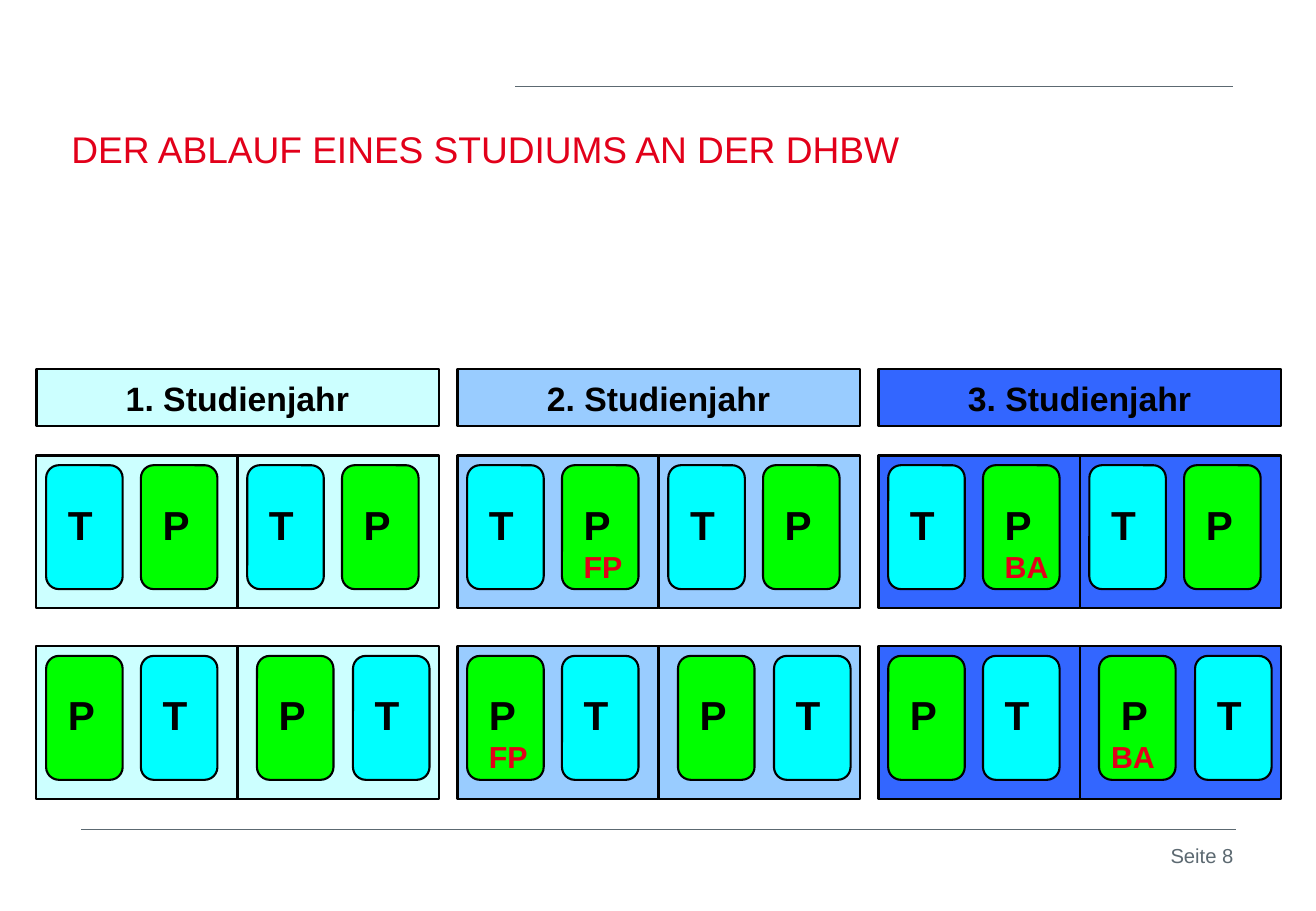
from lxml import etree
from pptx import Presentation, util as u
from pptx.dml.color import RGBColor
from pptx.enum import shapes, text
from pptx.oxml.ns import qn

BLACK, RED, GREY = "000000", "E2001A", "5C6971"
YEAR_COLOURS = ["CCFFFF", "99CCFF", "3366FF"]
PHASE_COLOURS = {"T": "00FFFF", "P": "00FF00"}
LETTER_WIDTHS = {"T": 0.39, "P": 0.47}
YEAR_LEFT, YEAR_PITCH, YEAR_WIDTH = 0.3, 3.465, 3.31
HALF_WIDTH, HALF_HEIGHT = YEAR_WIDTH / 2, 1.26
COURSES = [
    {"top": 3.75, "order": "TPTP", "offsets": (0.08, 0.86, 0.08, 0.86),
     "exams": {1: ("FP", 1, 0.08), 2: ("BA", 1, 0.08)}},
    {"top": 5.32, "order": "PTPT", "offsets": (0.08, 0.86, 0.16, 0.95),
     "exams": {1: ("FP", 0, 0.08), 2: ("BA", 2, 0)}},
]


def colour(hex_string):
    """Turn a hex string into a colour."""
    return RGBColor.from_string(hex_string)


def inches(box):
    """Turn left, top, width and height into lengths."""
    return [u.Inches(length) for length in box]


def write(frame, words, size, ink, bold=False, align=text.PP_ALIGN.LEFT):
    """Write one run into a text frame."""
    frame.word_wrap = True
    line = frame.paragraphs[0]
    line.alignment = align
    run = line.add_run()
    run.text = words
    run.font.name, run.font.size, run.font.bold = "Arial", u.Pt(size), bold
    run.font.color.rgb = colour(ink)


def add_label(parent, box, words, size, ink, bold=False, align=text.PP_ALIGN.LEFT):
    """Place a text box."""
    label = parent.add_textbox(*inches(box))
    write(label.text_frame, words, size, ink, bold, align)


def add_panel(parent, box, fill, preset=shapes.MSO_SHAPE.RECTANGLE):
    """Place a filled shape with a black outline."""
    panel = parent.add_shape(preset, *inches(box))
    panel.shadow.inherit = False
    panel.fill.solid()
    panel.fill.fore_color.rgb = colour(fill)
    panel.line.color.rgb = colour(BLACK)
    panel.line.width = u.Pt(1.25)
    return panel


def add_rule(parent, left, right, y):
    """Draw a thin horizontal line."""
    rule = parent.add_connector(shapes.MSO_CONNECTOR.STRAIGHT,
                                *inches((left, y, right, y)))
    rule.line.color.rgb = colour(GREY)
    rule.line.width = u.Pt(0.25)
    etree.SubElement(rule._element.spPr, qn("a:effectLst"))


def add_page_frame(parent):
    """Place the rules, the title and the page number."""
    add_rule(parent, 0.67, 10.17, 6.83)
    add_rule(parent, 4.24, 10.15, 0.71)
    add_label(parent, (0.49, 0.99, 9.34, 0.92),
              "DER ABLAUF EINES STUDIUMS AN DER DHBW", 22, RED)
    add_label(parent, (9.25, 6.89, 1, 0.5), "Seite 8", 12, GREY,
              align=text.PP_ALIGN.RIGHT)


def add_year_header(parent, box, year, fill):
    """Place the heading of a year of study."""
    header = add_panel(parent, box, fill)
    header.text_frame.vertical_anchor = text.MSO_ANCHOR.MIDDLE
    write(header.text_frame, f"{year}. Studienjahr", 20, BLACK, True,
          text.PP_ALIGN.CENTER)


def add_phase(parent, left, top, phase):
    """Place a card for a theory or practice phase."""
    add_panel(parent, (left, top, 0.63, 1.02), PHASE_COLOURS[phase],
              shapes.MSO_SHAPE.ROUNDED_RECTANGLE)
    add_label(parent, (left + 0.08, top + 0.235, LETTER_WIDTHS[phase], 0.5),
              phase, 24, BLACK, True)


def add_year(parent, left, course, fill, exam):
    """Place the two halves of a year with their phases and exam."""
    top = course["top"]
    year_group = parent.add_group_shape().shapes
    card_lefts = []
    for index, (phase, offset) in enumerate(zip(course["order"], course["offsets"])):
        half_left = left + index // 2 * HALF_WIDTH
        if index % 2 == 0:
            add_panel(year_group, (half_left, top, HALF_WIDTH, HALF_HEIGHT), fill)
        card_lefts.append(half_left + offset)
        add_phase(year_group, card_lefts[-1], top + 0.08, phase)
    if exam:
        name, card, indent = exam
        add_label(parent, (card_lefts[card] + indent, top + 0.71, 0.63, 0.4),
                  name, 18, RED, True)


def main():
    """Build the slide and save it."""
    deck = Presentation()
    deck.slide_width, deck.slide_height = u.Inches(10.83), u.Inches(7.5)
    parts = deck.slides.add_slide(deck.slide_layouts[6]).shapes
    add_page_frame(parts)
    for year, fill in enumerate(YEAR_COLOURS):
        left = YEAR_LEFT + year * YEAR_PITCH
        add_year_header(parts, (left, 3.04, YEAR_WIDTH, 0.47), year + 1, fill)
        for course in COURSES:
            add_year(parts, left, course, fill, course["exams"].get(year))
    deck.save("out.pptx")


if __name__ == "__main__":
    main()
